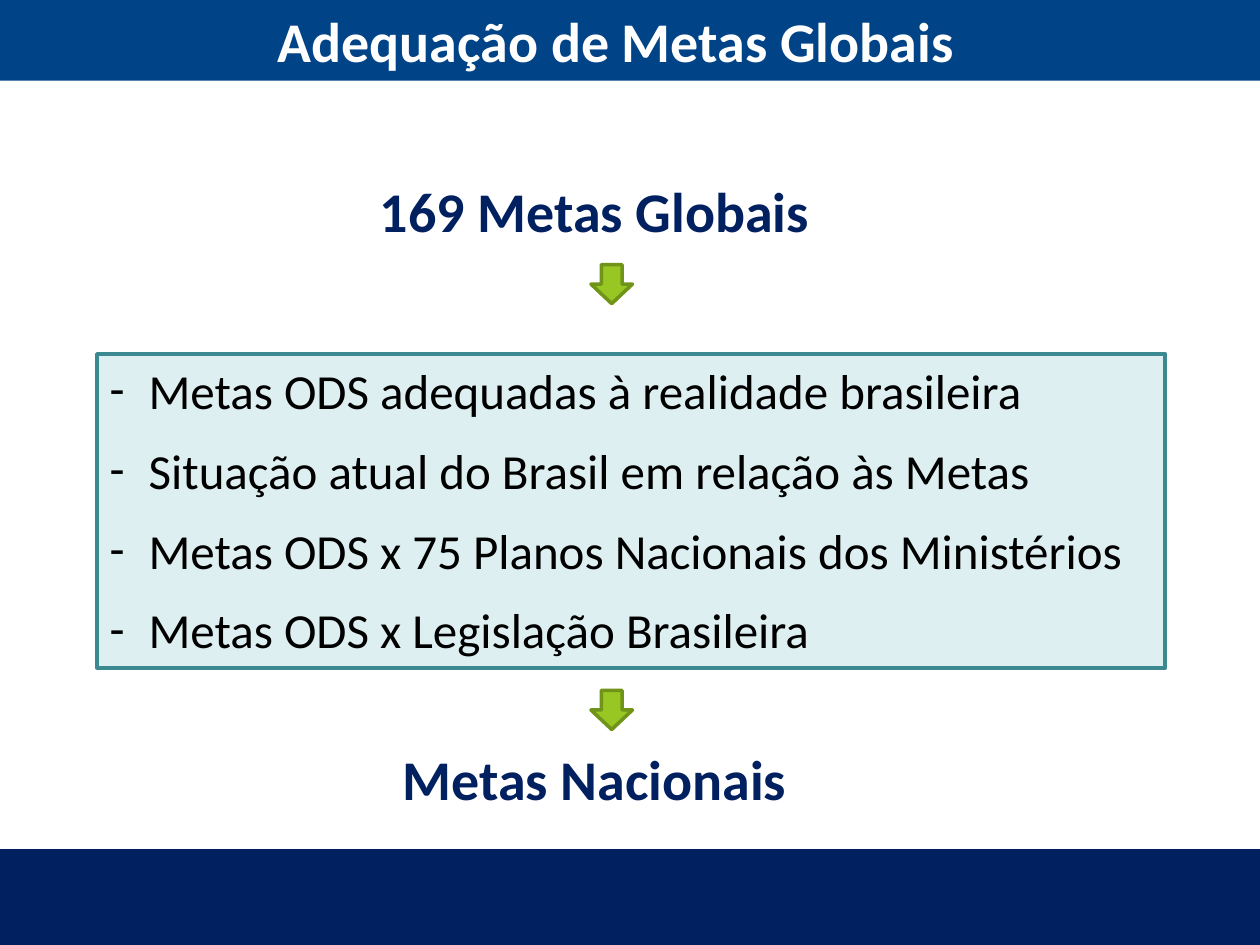
"""Build the slide that leads from global goals to national goals."""
from dataclasses import dataclass

from lxml.etree import SubElement
from pptx import Presentation
from pptx.dml.color import RGBColor as Rgb
from pptx.enum.shapes import MSO_SHAPE as Shape
from pptx.enum.text import MSO_ANCHOR as Anchor, MSO_AUTO_SIZE as AutoSize, PP_ALIGN as Align
from pptx.oxml.ns import qn
from pptx.util import Inches, Pt


@dataclass(frozen=True)
class Theme:
    font: str = "Calibri"
    heading_size: int = 32
    list_size: int = 28
    white: str = "FFFFFF"
    black: str = "000000"
    navy: str = "002060"
    blue: str = "004386"
    panel: str = "DEEFF1"
    panel_edge: str = "3D8991"
    green: str = "98C723"
    green_edge: str = "70931A"


def write(frame, lines, *, font, size, color, bold=False, align=Align.LEFT,
          anchor=Anchor.MIDDLE, right_inset=0.1, gap=0, bullet=None, indent=0.31):
    frame.word_wrap = True
    frame.auto_size = AutoSize.NONE
    frame.vertical_anchor = anchor
    frame.margin_left, frame.margin_right = Inches(0.1), Inches(right_inset)
    frame.margin_top = frame.margin_bottom = Inches(0.05)
    for index, line in enumerate(lines):
        paragraph = frame.add_paragraph() if index else frame.paragraphs[0]
        paragraph.text = line
        paragraph.alignment = align
        paragraph.space_before = Pt(gap if index else 0)
        paragraph.space_after = Pt(gap)
        if bullet:
            properties = paragraph._p.get_or_add_pPr()
            properties.set("marL", str(Inches(indent)))
            properties.set("indent", str(-Inches(indent)))
            SubElement(properties, qn("a:buFont"), typeface=font)
            SubElement(properties, qn("a:buChar"), char=bullet)
        paragraph.font.name = font
        paragraph.font.size = Pt(size)
        paragraph.font.bold = bold
        paragraph.font.color.rgb = Rgb.from_string(color)


class GoalsSlide:
    COLUMNS, ROWS = 100, 75

    def __init__(self, deck, theme):
        self.theme = theme
        self.column = deck.slide_width / self.COLUMNS
        self.row = deck.slide_height / self.ROWS
        self.slide = deck.slides.add_slide(deck.slide_layouts[1])

    def area(self, left, top, width, height):
        return (round(left * self.column), round(top * self.row),
                round(width * self.column), round(height * self.row))

    def paint(self, target, fill, edge=None, weight=0):
        target.fill.solid()
        target.fill.fore_color.rgb = Rgb.from_string(fill)
        if edge:
            target.line.color.rgb = Rgb.from_string(edge)
            target.line.width = Pt(weight)
        else:
            target.line.fill.background()

    def place(self, holder, area):
        holder.left, holder.top, holder.width, holder.height = self.area(*area)

    def title(self, text, area):
        banner = self.slide.shapes.title
        self.place(banner, area)
        self.paint(banner, self.theme.blue)
        write(banner.text_frame, [text], font=self.theme.font, size=self.theme.heading_size,
              color=self.theme.white, bold=True, align=Align.CENTER, right_inset=0.32)

    def list_panel(self, items, area):
        panel = self.slide.placeholders[1]
        self.place(panel, area)
        self.paint(panel, self.theme.panel, self.theme.panel_edge, 2.25)
        write(panel.text_frame, items, font=self.theme.font, size=self.theme.list_size,
              color=self.theme.black, anchor=Anchor.TOP, gap=6, bullet="-")

    def heading(self, text, area):
        box = self.slide.shapes.add_textbox(*self.area(*area))
        write(box.text_frame, [text], font=self.theme.font, size=self.theme.heading_size,
              color=self.theme.navy, bold=True, align=Align.CENTER, right_inset=0.22)

    def shape(self, kind, area, fill, edge=None, weight=0):
        drawn = self.slide.shapes.add_shape(kind, *self.area(*area))
        drawn.shadow.inherit = False
        self.paint(drawn, fill, edge, weight)

    def down_arrow(self, top):
        self.shape(Shape.DOWN_ARROW, (46.9, top, 3.3, 3.1),
                   self.theme.green, self.theme.green_edge, 2)


def main():
    deck = Presentation()
    deck.slide_width, deck.slide_height = Inches(10), Inches(7.5)
    theme = Theme()
    goals = GoalsSlide(deck, theme)
    goals.shape(Shape.RECTANGLE, (0, 67.4, 100, 7.6), theme.navy)
    goals.title("Adequação de Metas Globais", (0, 0, 100, 6.4))
    goals.list_panel([
        "Metas ODS adequadas à realidade brasileira",
        "Situação atual do Brasil em relação às Metas",
        "Metas ODS x 75 Planos Nacionais dos Ministérios",
        "Metas ODS x Legislação Brasileira",
    ], (7.7, 28.1, 84.8, 24.9))
    for text, heading_top, arrow_top in (("169 Metas Globais", 13.1, 21),
                                         ("Metas Nacionais", 58.2, 54.8)):
        goals.heading(text, (25.9, heading_top, 43.8, 7.1))
        goals.down_arrow(arrow_top)
    deck.save("out.pptx")


if __name__ == "__main__":
    main()
